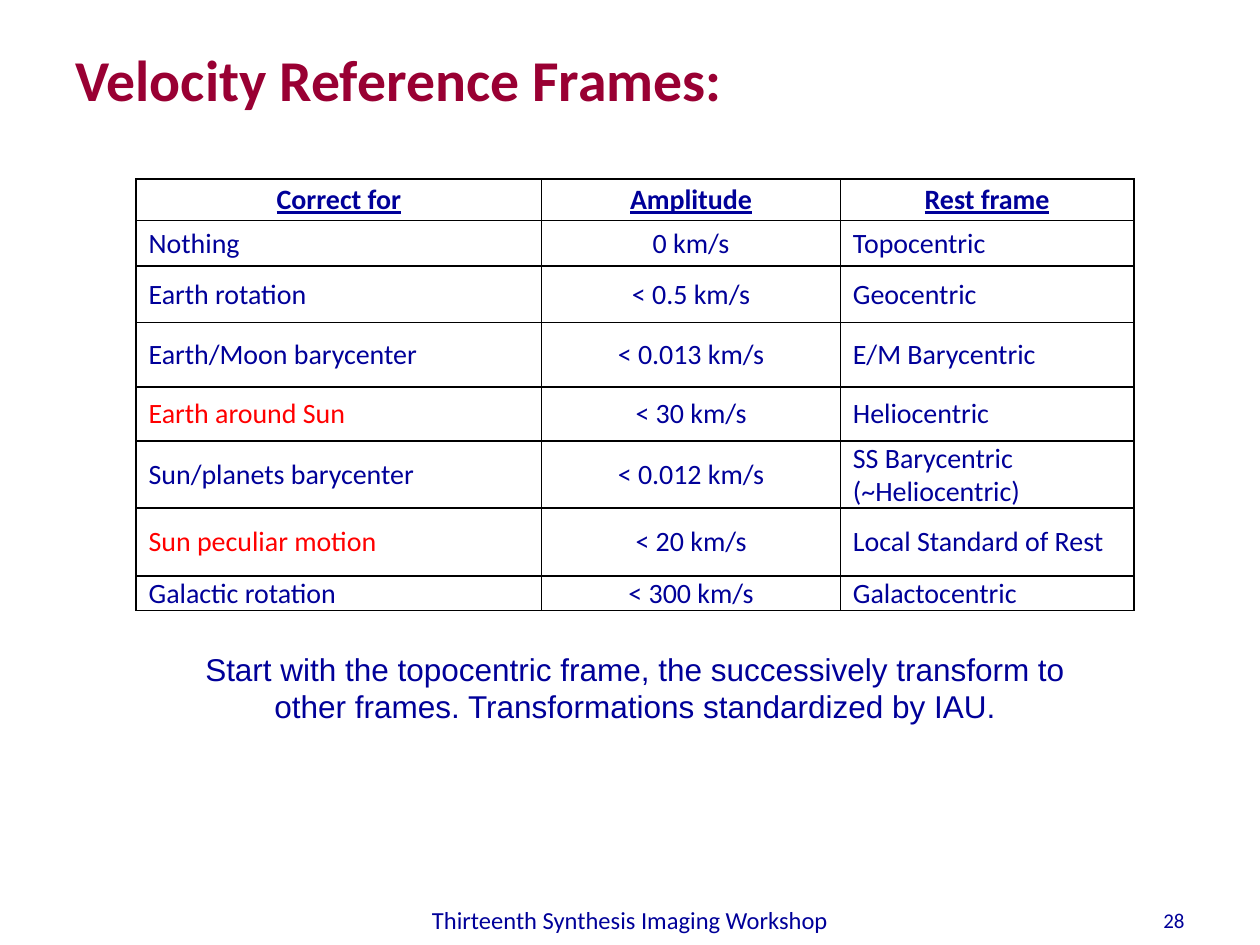
import pptx
import pptx.util
import pptx.dml.color
import pptx.enum.text
import pptx.oxml
import pptx.oxml.ns

Inches, Pt = pptx.util.Inches, pptx.util.Pt
ALIGN = pptx.enum.text.PP_ALIGN
ANCHOR = pptx.enum.text.MSO_ANCHOR

COLORS = {"title": "990033", "text": "000099", "accent": "FF0000", "border": "000000"}

TITLE = "Velocity Reference Frames:"
FRAMES = [
    ("Correct for", "Amplitude", "Rest frame"),
    ("Nothing", "0 km/s", "Topocentric"),
    ("Earth rotation", "< 0.5 km/s", "Geocentric"),
    ("Earth/Moon barycenter", "< 0.013 km/s", "E/M Barycentric"),
    ("Earth around Sun", "< 30 km/s", "Heliocentric"),
    ("Sun/planets barycenter", "< 0.012 km/s", "SS Barycentric (~Heliocentric)"),
    ("Sun peculiar motion", "< 20 km/s", "Local Standard of Rest"),
    ("Galactic rotation", "< 300 km/s", "Galactocentric"),
]
HIGHLIGHTED = {"Earth around Sun", "Sun peculiar motion"}
COLUMN_WIDTHS = [3.22, 2.37, 2.33]
ROW_HEIGHTS = [0.33, 0.36, 0.45, 0.51, 0.43, 0.53, 0.54, 0.27]
TEXT_BOXES = [
    ("28", (9, 7.1, 0.5, 0.4), ALIGN.RIGHT, 12, "Calibri"),
    ("Thirteenth Synthesis Imaging Workshop", (0.5, 7.1, 9, 0.4), ALIGN.CENTER, 14, "Calibri"),
    ("Start with the topocentric frame, the successively transform to other frames. "
     "Transformations standardized by IAU.", (1.25, 5.1, 7.58, 0.71), ALIGN.CENTER, 18, "Arial"),
]


def write(frame, text, align, size, font="Calibri", color="text", bold=False, underline=False):
    frame.text = text
    para = frame.paragraphs[0]
    para.alignment = align
    for span in para.runs:
        span.font.name, span.font.size = font, Pt(size)
        span.font.bold, span.font.underline = bold, underline
        span.font.color.rgb = pptx.dml.color.RGBColor.from_string(COLORS[color])
    return para


def add_borders(cell):
    properties = cell._tc.get_or_add_tcPr()
    for side in ("lnL", "lnR", "lnT", "lnB"):
        properties.append(pptx.oxml.parse_xml(
            f'<a:{side} {pptx.oxml.ns.nsdecls("a")} w="{Pt(1)}"><a:solidFill>'
            f'<a:srgbClr val="{COLORS["border"]}"/></a:solidFill></a:{side}>'))


def add_title(page):
    title = page.shapes.title
    title.left, title.top, title.width, title.height = map(Inches, (0.5, 0.3, 9, 1.25))
    title.text_frame.vertical_anchor = ANCHOR.TOP
    write(title.text_frame, TITLE, ALIGN.LEFT, 33, color="title", bold=True)


def add_text_box(page, text, place, align, size, font):
    frame = page.shapes.add_textbox(*map(Inches, place)).text_frame
    frame.word_wrap = True
    frame.vertical_anchor = ANCHOR.MIDDLE
    write(frame, text, align, size, font)


def add_frames_table(page):
    table = page.shapes.add_table(
        len(FRAMES), len(COLUMN_WIDTHS), Inches(1.08), Inches(1.42),
        Inches(sum(COLUMN_WIDTHS)), Inches(sum(ROW_HEIGHTS))).table
    table.first_row = table.horz_banding = False
    for column, width in zip(table.columns, COLUMN_WIDTHS):
        column.width = Inches(width)
    for row, (height, texts) in enumerate(zip(ROW_HEIGHTS, FRAMES)):
        table.rows[row].height = Inches(height)
        header = row == 0
        for column, text in enumerate(texts):
            cell = table.cell(row, column)
            cell.margin_left = cell.margin_right = Inches(0.1)
            cell.margin_top = cell.margin_bottom = Inches(0.01)
            cell.vertical_anchor = ANCHOR.MIDDLE
            add_borders(cell)
            cell.fill.background()
            para = write(cell.text_frame, text,
                         ALIGN.CENTER if header or column == 1 else ALIGN.LEFT, 16,
                         color="accent" if text in HIGHLIGHTED else "text",
                         bold=header, underline=header)
            para.line_spacing = 0.96
            para.space_after = Pt(14.2)


def main():
    """Build the slide on velocity reference frames."""
    deck = pptx.Presentation()
    deck.slide_width, deck.slide_height = Inches(10), Inches(7.5)
    page = deck.slides.add_slide(deck.slide_layouts[5])
    add_title(page)
    for box in TEXT_BOXES:
        add_text_box(page, *box)
    add_frames_table(page)
    deck.save("out.pptx")


if __name__ == "__main__":
    main()
